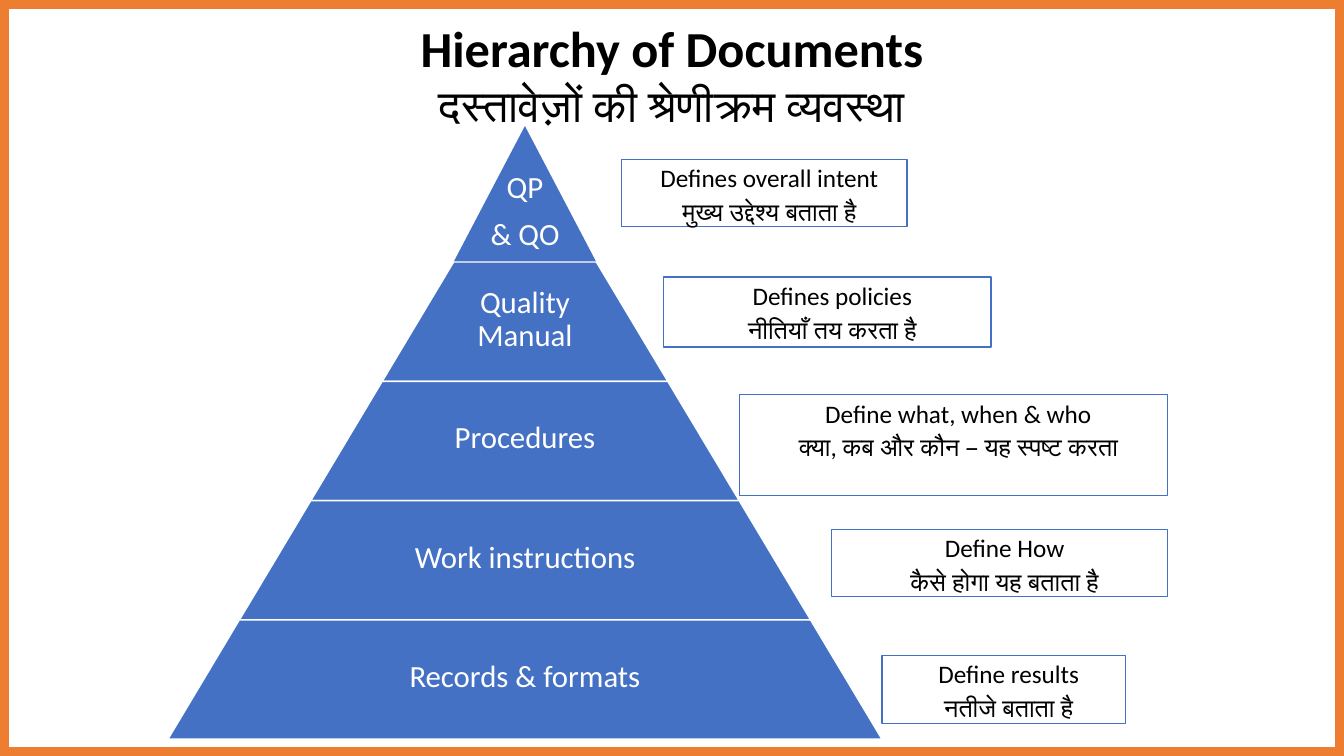
import pptx
import pptx.util
import pptx.dml.color
import pptx.enum.shapes
import pptx.enum.text
from lxml import etree

Pt = pptx.util.Pt
RGBColor = pptx.dml.color.RGBColor
SHAPES = pptx.enum.shapes.MSO_SHAPE
CENTER = pptx.enum.text.PP_ALIGN.CENTER
ANCHOR = pptx.enum.text.MSO_ANCHOR

ORANGE = RGBColor(0xED, 0x7D, 0x31)
BLUE = RGBColor(0x44, 0x71, 0xC4)
WHITE = RGBColor(0xFF, 0xFF, 0xFF)
BLACK = RGBColor(0x00, 0x00, 0x00)

SLIDE_WIDTH, SLIDE_HEIGHT = 960, 540
BORDER = 6

TITLE_LINES = [
    ("Hierarchy of Documents", {"size": Pt(36), "bold": True}),
    ("दस्तावेज़ों की श्रेणीक्रम व्यवस्था", {"size": Pt(32), "bold": False}),
]

# paragraphs, label width, label height, shift from tier middle, top inset, spacing
TIERS = [
    (["QP", "& QO"], 51, 68, 7.5, 8, {"space_before": Pt(7)}),
    (["Quality Manual"], 70, 52, -3, 3.6, {"space_before": Pt(4), "line_spacing": Pt(23.8)}),
    (["Procedures"], 104, 28, -3, 0.7, {"space_before": Pt(1)}),
    (["Work instructions"], 162, 28, -3, 0.7, {"space_before": Pt(1)}),
    (["Records & formats"], 169, 28, -3, 0.7, {"space_before": Pt(1)}),
]

# left, top, width, height, paragraphs
NOTES = [
    (444, 114, 204, 48, ["Defines overall intent", "मुख्य उद्देश्य बताता है"]),
    (474, 198, 234, 50, ["Defines policies", "नीतियाँ तय करता है"]),
    (528, 282, 306, 72, ["Define what, when & who", "क्या, कब और कौन – यह स्पष्ट करता"]),
    (594, 378, 240, 48, ["Define How", "कैसे होगा यह बताता है"]),
    (630, 468, 174, 49, ["Define results", "नतीजे बताता है"]),
]

AXIS, PEAK = 375, 90
FIRST_BASE, TIER_HEIGHT, HALF_STEP = 187.2, 85.2, 51


def apply(target, values):
    for name, value in values.items():
        setattr(target, name, value)


def add_span(para, text, color, values):
    span = para.add_run()
    span.text = text
    apply(span.font, {"name": "Calibri", **values})
    span.font.color.rgb = color


def set_frame(box, left=0, top=0, anchor=ANCHOR.TOP):
    frame = box.text_frame
    apply(frame, {
        "word_wrap": True, "vertical_anchor": anchor, "margin_left": Pt(left),
        "margin_top": Pt(top), "margin_right": 0, "margin_bottom": 0,
    })
    return frame


def write(frame, lines, color, size, spacing):
    for index, line in enumerate(lines):
        para = frame.paragraphs[0] if index == 0 else frame.add_paragraph()
        apply(para, {"alignment": CENTER, **spacing})
        add_span(para, line, color, {"size": Pt(size)})


def paint(shape, fill=None, line=None):
    shape.shadow.inherit = False
    if fill is None:
        shape.fill.background()
    else:
        shape.fill.solid()
        shape.fill.fore_color.rgb = fill
    if line is None:
        shape.line.fill.background()
    else:
        shape.line.color.rgb = line
        shape.line.width = Pt(1)


def add_border(page):
    border = page.shapes.add_shape(SHAPES.FRAME, 0, 0, Pt(SLIDE_WIDTH), Pt(SLIDE_HEIGHT))
    border.adjustments[0] = BORDER / SLIDE_HEIGHT
    paint(border, ORANGE, ORANGE)


def add_title(page):
    box = page.shapes.add_textbox(Pt(241), Pt(11), Pt(478), Pt(83.5))
    para = set_frame(box, top=1, anchor=ANCHOR.MIDDLE).paragraphs[0]
    apply(para, {"alignment": CENTER, "space_before": Pt(1)})
    for index, (text, values) in enumerate(TITLE_LINES):
        if index:
            para.add_line_break()
        add_span(para, text, BLACK, values)


def add_tier(page, index, lines, width, height, shift, inset, spacing):
    base = FIRST_BASE + index * TIER_HEIGHT
    top = base - TIER_HEIGHT if index else PEAK
    upper, lower = index * HALF_STEP, (index + 1) * HALF_STEP
    corners = [(AXIS + upper, top), (AXIS + lower, base), (AXIS - lower, base)]
    if index:
        corners.append((AXIS - upper, top))
    corners = [(Pt(x), Pt(y)) for x, y in corners]
    builder = page.shapes.build_freeform(*corners[0])
    builder.add_line_segments(corners[1:], close=True)
    paint(builder.convert_to_shape(), BLUE, WHITE if index else None)

    middle = (top + base) / 2 + shift
    label = page.shapes.add_textbox(
        Pt(AXIS - width / 2), Pt(middle - height / 2), Pt(width), Pt(height))
    write(set_frame(label, top=inset), lines, WHITE, 22, spacing)


def add_note(page, left, top, width, height, lines):
    note = page.shapes.add_shape(SHAPES.RECTANGLE, Pt(left), Pt(top), Pt(width), Pt(height))
    paint(note, line=BLUE)
    write(set_frame(note, left=7.2, top=2.2), lines, BLACK, 18, {"space_before": Pt(2.5)})


def main():
    deck = pptx.Presentation()
    apply(deck, {"slide_width": Pt(SLIDE_WIDTH), "slide_height": Pt(SLIDE_HEIGHT)})
    page = deck.slides.add_slide(deck.slide_layouts[6])
    add_border(page)
    add_title(page)
    for index, tier in enumerate(TIERS):
        add_tier(page, index, *tier)
    for note in NOTES:
        add_note(page, *note)
    deck.save("out.pptx")


if __name__ == "__main__":
    main()
